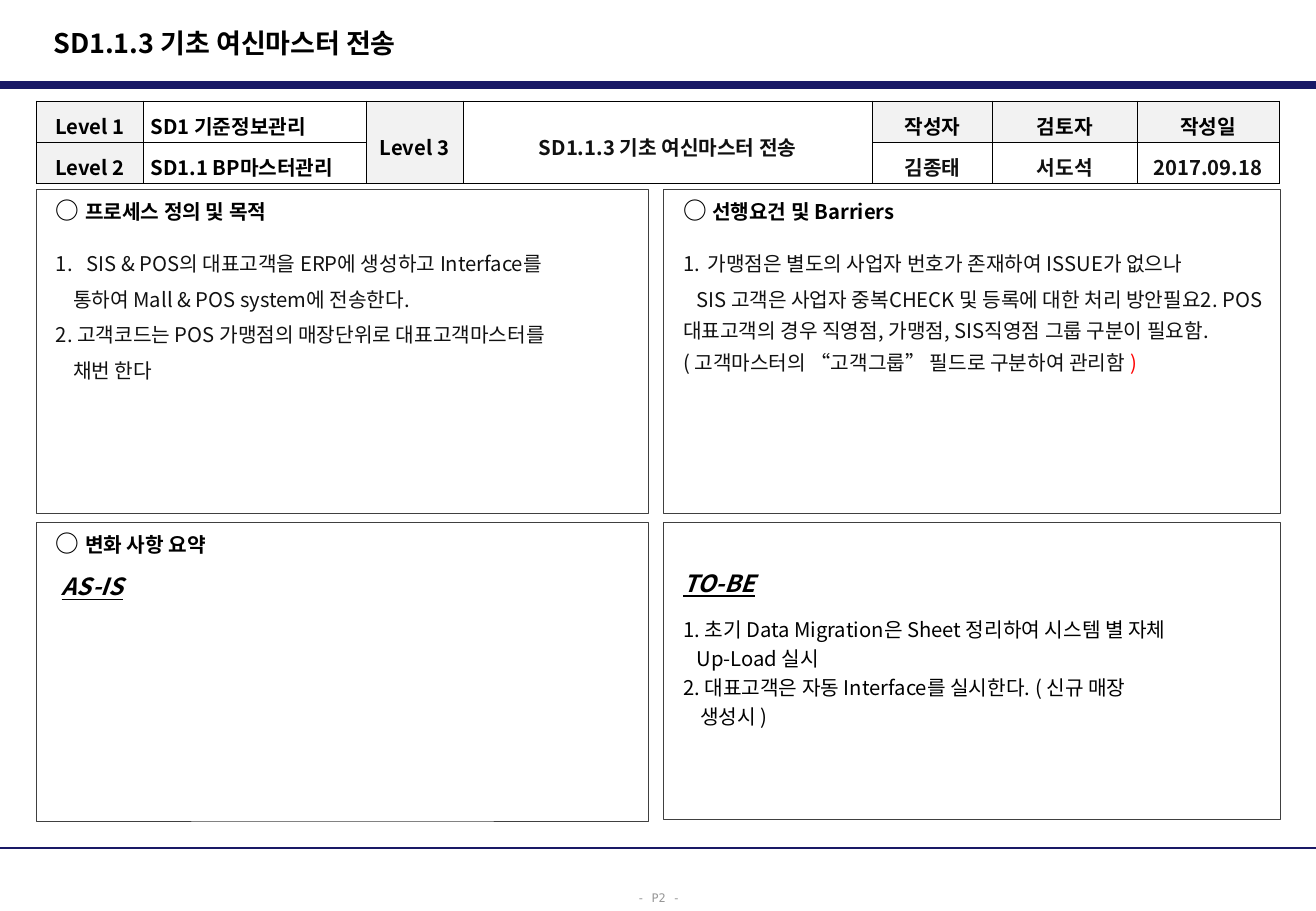
from pptx import Presentation
from pptx.dml.color import RGBColor as RGB
from pptx.enum.shapes import MSO_CONNECTOR as Link, MSO_SHAPE as Kind
from pptx.enum.text import MSO_ANCHOR as Anchor, PP_ALIGN as Align
from pptx.oxml.ns import qn
from pptx.util import Cm, Pt
from lxml.etree import SubElement as Sub

FONT = "Noto Sans CJK KR"
NAVY, GRAY, EDGE = "191966", "F2F2F2", "404040"
LEFT, RIGHT, WIDE = 0.76, 13.87, 27.51
PANEL_W = 12.8
HEAD = {"size": 12, "bold": True}
MARK = {"size": 14, "bold": True}
SIGN = {"size": 14, "bold": True, "italic": True, "underline": True}


def paint(text):
    return RGB.from_string(text)


def style(run, size=12, color="000000", bold=False, italic=False, underline=False, name=FONT):
    font = run.font
    font.size, font.bold, font.italic = Pt(size), bold, italic
    font.underline = underline
    font.name = name
    font.color.rgb = paint(color)
    Sub(run._r.get_or_add_rPr(), qn("a:ea"), typeface=name)


def write(para, parts, before=0, line=None, left=0, first=0, num=False):
    props = para._p.get_or_add_pPr()
    props.set("marL", str(Cm(left)))
    props.set("indent", str(Cm(first)))
    if num:
        Sub(props, qn("a:buFont"), typeface="+mj-lt")
        Sub(props, qn("a:buAutoNum"), type="arabicPeriod")
    else:
        Sub(props, qn("a:buNone"))
    para.alignment = Align.LEFT
    para.space_before = Pt(before)
    if line:
        para.line_spacing = line
    for text, look in parts:
        run = para.add_run()
        run.text = text
        style(run, **look)


def rule(slide, y, weight):
    line = slide.shapes.add_connector(Link.STRAIGHT, Cm(0), Cm(y), Cm(WIDE), Cm(y))
    line.line.color.rgb = paint(NAVY)
    line.line.width = Pt(weight)
    Sub(line._element.spPr, qn("a:effectLst"))


def panel(slide, x, y, width, height, paras, top=0.13):
    box = slide.shapes.add_shape(Kind.RECTANGLE, Cm(x), Cm(y), Cm(width), Cm(height))
    box.shadow.inherit = False
    box.fill.background()
    box.line.color.rgb = paint(EDGE)
    box.line.width = Pt(0.5)
    frame = box.text_frame
    frame.word_wrap = True
    frame.vertical_anchor = Anchor.TOP
    frame.margin_left, frame.margin_right = Cm(0.41), Cm(0.25)
    frame.margin_top = frame.margin_bottom = Cm(top)
    for i, (parts, form) in enumerate(paras):
        para = frame.add_paragraph() if i else frame.paragraphs[0]
        write(para, parts, **form)


def head(text):
    return [("○ ", MARK), (text, HEAD)], {}


def item(text, before=2.4, line=Pt(18.7), color="111111", tail="", **form):
    parts = [(text, {"color": color})]
    if tail:
        parts.append((tail, {"color": "FF0000"}))
    return parts, {"before": before, "line": line, **form}


def border(cell):
    props = cell._tc.get_or_add_tcPr()
    for i, side in enumerate(("lnL", "lnR", "lnT", "lnB")):
        edge = props.makeelement(qn("a:" + side), {"w": str(Pt(0.5))})
        fill = Sub(edge, qn("a:solidFill"))
        Sub(fill, qn("a:srgbClr"), val="000000")
        props.insert(i, edge)


def grid(slide):
    rows = [
        ["Level 1", "SD1 기준정보관리", "Level 3", "SD1.1.3 기초 여신마스터 전송", "작성자", "검토자", "작성일"],
        ["Level 2", "SD1.1 BP마스터관리", "", "", "김종태", "서도석", "2017.09.18"],
    ]
    cols = [2.24, 4.65, 2.03, 8.56, 2.51, 3.02, 2.97]
    frame = slide.shapes.add_table(2, 7, Cm(LEFT), Cm(2.11), Cm(sum(cols)), Cm(1.72))
    table = frame.table
    for col, width in zip(table.columns, cols):
        col.width = Cm(width)
    for r, row in enumerate(rows):
        table.rows[r].height = Cm(0.86)
        for c, text in enumerate(row):
            cell = table.cell(r, c)
            shade = c in (0, 2) or (r == 0 and c > 3)
            cell.fill.solid()
            cell.fill.fore_color.rgb = paint(GRAY if shade else "FFFFFF")
            border(cell)
            cell.margin_left = cell.margin_right = Cm(0.15)
            cell.margin_top = cell.margin_bottom = Cm(0.02)
            cell.vertical_anchor = Anchor.MIDDLE
            if text:
                para = cell.text_frame.paragraphs[0]
                dark = c == 3 or (r == 1 and c > 3)
                write(para, [(text, {**HEAD, "color": "111111" if dark else "000000"})], line=1.3)
                para.alignment = Align.LEFT if c == 1 else Align.CENTER
    for c in (2, 3):
        table.cell(0, c).merge(table.cell(1, c))


def title(slide, text):
    shape = slide.shapes.title
    shape.left, shape.top, shape.width, shape.height = Cm(0.86), Cm(0.41), Cm(18.06), Cm(0.97)
    frame = shape.text_frame
    frame.vertical_anchor = Anchor.MIDDLE
    write(frame.paragraphs[0], [(text, {"size": 16, "bold": True})])


def footer(slide, text):
    box = slide.shapes.add_textbox(Cm(13.06), Cm(18.42), Cm(1.42), Cm(0.64))
    para = box.text_frame.paragraphs[0]
    write(para, [(text, {"size": 7, "color": "969696", "name": "DejaVu Sans Mono"})], line=1.3)
    para.alignment = Align.CENTER


def main():
    deck = Presentation()
    deck.slide_width, deck.slide_height = Cm(WIDE), Cm(19.05)
    slide = deck.slides.add_slide(deck.slide_layouts[5])
    rule(slide, 1.78, 4.5)
    rule(slide, 17.73, 1.5)
    title(slide, "SD1.1.3 기초 여신마스터 전송")
    grid(slide)
    panel(slide, LEFT, 3.96, PANEL_W, 6.78, [
        head("프로세스 정의 및 목적"),
        item("SIS & POS의 대표고객을 ERP에 생성하고 Interface를", 12, left=0.64, first=-0.64, num=True),
        item("통하여 Mall & POS system에 전송한다.", left=0.36),
        item("2. 고객코드는 POS 가맹점의 매장단위로 대표고객마스터를"),
        item("채번 한다", left=0.36),
    ])
    panel(slide, RIGHT, 3.96, 12.9, 6.78, [
        head("선행요건 및 Barriers"),
        item("가맹점은 별도의 사업자 번호가 존재하여 ISSUE가 없으나", 12, left=0.51, first=-0.51, num=True),
        item("SIS 고객은 사업자 중복CHECK 및 등록에 대한 처리 방안필요2. "
             "POS 대표고객의 경우 직영점, 가맹점, SIS직영점 그룹 구분이 필요함. "
             "( 고객마스터의 “고객그룹” 필드로 구분하여 관리함 ", first=0.28, tail=")"),
    ])
    panel(slide, LEFT, 10.92, PANEL_W, 6.25, [
        head("변화 사항 요약"),
        ([("AS-IS", SIGN)], {"before": 9, "left": 0.12}),
    ])
    plain = {"before": 0, "line": Pt(17.2), "color": "000000"}
    panel(slide, RIGHT, 10.92, 12.9, 6.22, [
        ([("TO-BE", SIGN)], {}),
        item("1. 초기 Data Migration은 Sheet 정리하여 시스템 별 자체", **{**plain, "before": 9}),
        item("Up-Load 실시", left=0.28, **plain),
        item("2. 대표고객은 자동 Interface를 실시한다. ( 신규 매장", **plain),
        item("생성시 )", left=0.36, **plain),
    ], top=0.97)
    footer(slide, "- P2 -")
    deck.save("out.pptx")


if __name__ == "__main__":
    main()
